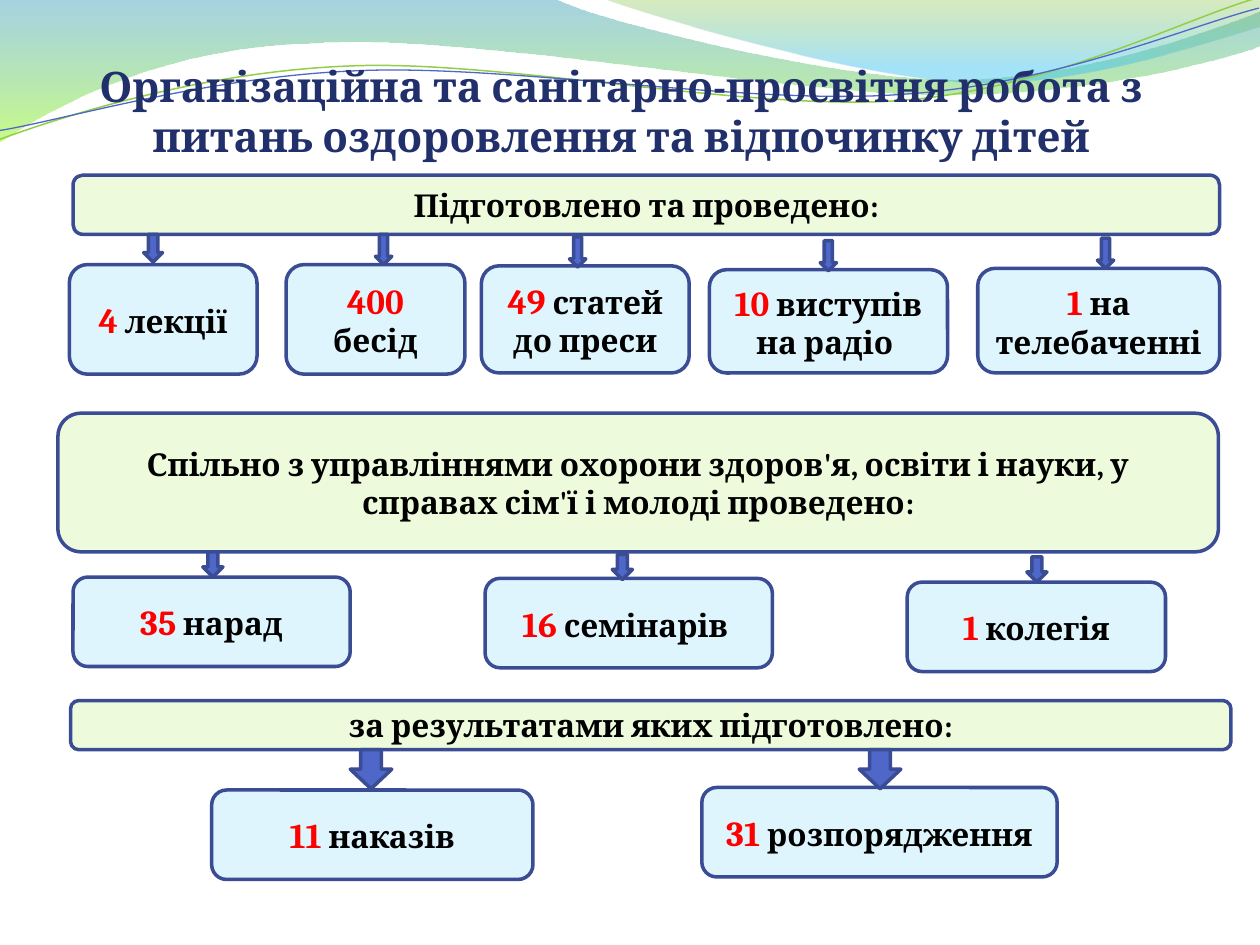
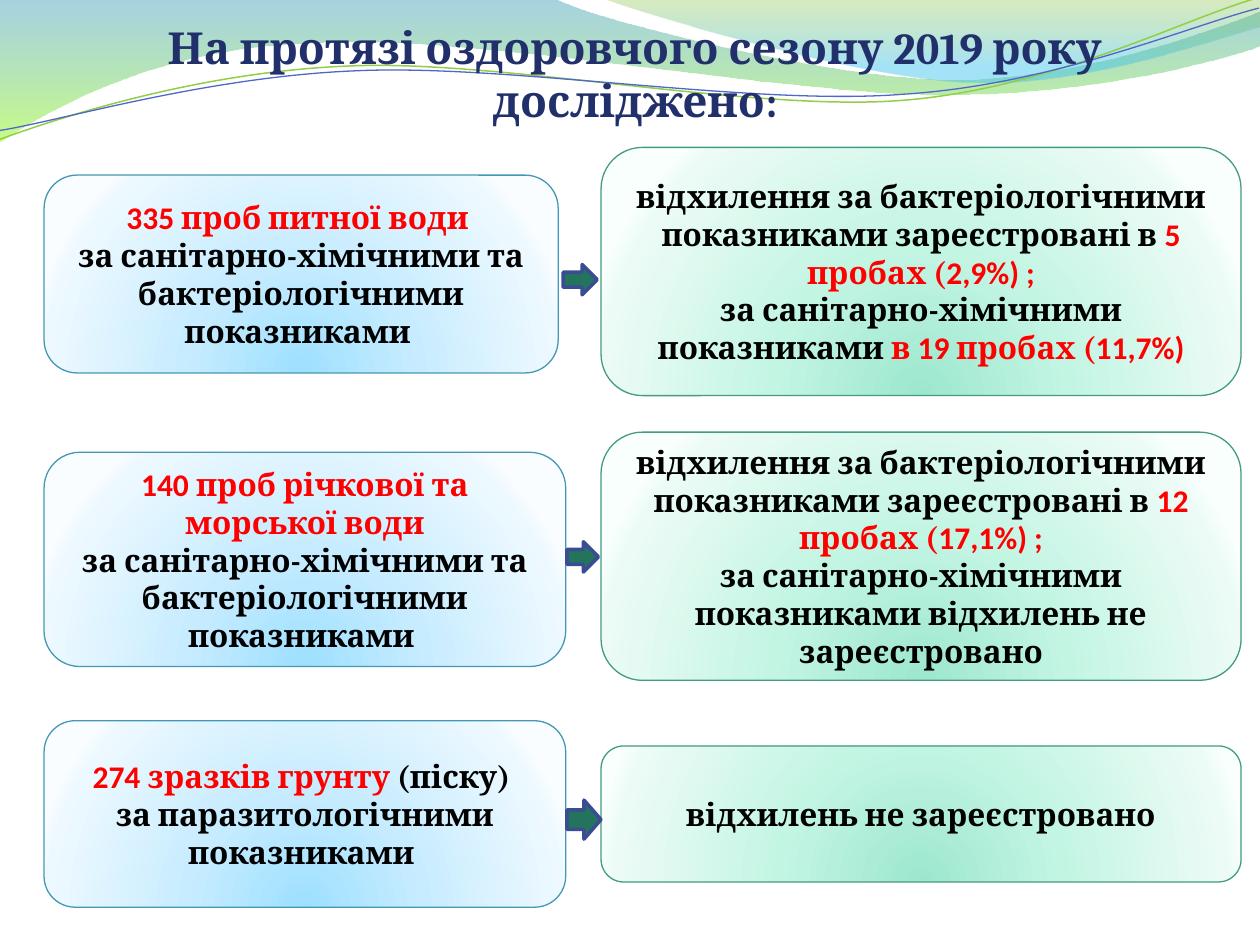
from dataclasses import dataclass
from typing import NamedTuple

from lxml import etree
from pptx import Presentation
from pptx.dml.color import RGBColor
from pptx.enum.shapes import MSO_SHAPE
from pptx.enum.text import MSO_ANCHOR, PP_ALIGN
from pptx.oxml.ns import qn
from pptx.util import Inches, Pt

ROUND_RECT = MSO_SHAPE.ROUNDED_RECTANGLE
DOWN_ARROW = MSO_SHAPE.DOWN_ARROW
RIGHT_ARROW = MSO_SHAPE.RIGHT_ARROW
CENTER = PP_ALIGN.CENTER
MIDDLE, BOTTOM = MSO_ANCHOR.MIDDLE, MSO_ANCHOR.BOTTOM

# Shared fonts and colours
SERIF, SANS = "Cambria", "Calibri"
NAVY, OUTLINE, BLUE, GREEN = "21306A", "3A4C94", "4E67C8", "23735D"
HEADER_FILL, ITEM_FILL = "EDFBDC", "DFF5FD"
BLACK, RED = "000000", "FF0000"


class Span(NamedTuple):
    text: str
    color: str = BLACK
    font: str = SERIF
    size: float = 18


class Area(NamedTuple):
    left: float
    top: float
    width: float
    height: float


class Stop(NamedTuple):
    position: int
    color: str
    alpha: int = 100


class Glow(NamedTuple):
    stops: list[Stop]
    line: str


@dataclass
class Wave:
    """Start point, then 2 numbers for a straight piece or 6 for a cubic curve."""
    start: tuple[float, float]
    pieces: list[tuple[float, ...]]
    stops: list[Stop] | None = None
    line: str = ""
    weight: float = 0
    rotation: float = 0


@dataclass
class Item:
    area: Area
    count: str
    label: str
    arrow: Area


@dataclass
class Section:
    header: str
    area: Area
    items: list[Item]


@dataclass
class Finding:
    sample_area: Area
    sample: list[list[Span]]
    result_area: Area
    result: list[list[Span]]
    arrow: Area


WATER = Glow([Stop(0, "9DE0FF"), Stop(43, "C8ECFF"), Stop(93, "EEF9FF"),
              Stop(100, "F9FDFF")], "4498B5")
MINT = Glow([Stop(0, "9DE7CE"), Stop(43, "C3F5E3"), Stop(93, "ECFBF6"),
             Stop(100, "F8FFFC")], "449A82")

WAVES = [
    Wave((0, 0), [(4.4, -0.01), (4.76, 0.17, 6.64, 0.63, 7.58, 0.63),
                  (8.53, 0.63, 9.58, 0.26, 10, 0.09), (10.01, 0.36),
                  (9.83, 0.44, 8.7, 0.76, 7.46, 0.75),
                  (6.22, 0.75, 3.82, 0.28, 2.57, 0.34),
                  (1.29, 0.36, 0.46, 0.83, -0.01, 1.13), (0, 0)],
         stops=[Stop(0, "3B9CBF", 45), Stop(100, "9CFA24", 55)]),
    Wave((4.79, -0.01), [(5.09, 0.11, 6.82, 0.62, 7.69, 0.65),
                         (8.56, 0.69, 9.61, 0.32, 10, 0.21), (10, 0), (4.79, -0.01)],
         stops=[Stop(0, "7EBE2C", 30), Stop(80, "39C1F1", 45)]),
    Wave((-0.02, 0.87), [(0.46, 0.72, 1.58, 0.41, 2.77, 0.42),
                         (3.95, 0.42, 5.92, 0.93, 7.12, 0.9),
                         (8.32, 0.87, 9.4, 0.36, 10, 0.22)],
         line="93CE48", weight=0.85, rotation=357.3),
    Wave((-0.02, 0.8), [(0.45, 0.75, 1.64, 0.45, 2.83, 0.46),
                        (4.03, 0.46, 5.96, 0.89, 7.16, 0.85),
                        (8.36, 0.83, 9.43, 0.42, 10.01, 0.3)],
         line=BLUE, weight=0.75, rotation=357.3),
]

SECTIONS = [
    Section("Підготовлено та проведено:", Area(0.58, 1.39, 9.1, 0.47), [
        Item(Area(0.55, 2.1, 1.49, 0.87), "4", " лекції", Area(1.14, 1.86, 0.15, 0.22)),
        Item(Area(2.27, 2.1, 1.42, 0.87), "400", " бесід", Area(2.98, 1.86, 0.13, 0.24)),
        Item(Area(3.82, 2.11, 1.65, 0.85), "49", " статей до преси",
             Area(4.52, 1.88, 0.13, 0.24)),
        Item(Area(5.63, 2.14, 1.89, 0.82), "10", " виступів на радіо ",
             Area(6.51, 1.91, 0.13, 0.24)),
        Item(Area(7.76, 2.13, 1.92, 0.83), "1", " на телебаченні",
             Area(8.71, 1.89, 0.13, 0.24)),
    ]),
    Section("Спільно з управліннями охорони здоров'я, освіти і науки, у справах "
            "сім'ї і молоді проведено:", Area(0.46, 3.28, 9.21, 1.1), [
        Item(Area(0.58, 4.58, 2.2, 0.71), "35", " нарад", Area(1.61, 4.38, 0.16, 0.2)),
        Item(Area(3.85, 4.59, 2.28, 0.71), "16", " семінарів ",
             Area(4.86, 4.4, 0.16, 0.2)),
        Item(Area(7.2, 4.62, 2.05, 0.71), "1", " колегія", Area(8.15, 4.42, 0.16, 0.2)),
    ]),
    Section("за результатами яких підготовлено:", Area(0.56, 5.56, 9.21, 0.39), [
        Item(Area(1.68, 6.27, 2.55, 0.71), "11", " наказів",
             Area(2.78, 5.95, 0.33, 0.31)),
        Item(Area(5.57, 6.25, 2.82, 0.71), "31", " розпорядження",
             Area(6.82, 5.95, 0.33, 0.31)),
    ]),
]

INDICATORS = [Span("за санітарно-хімічними та бактеріологічними показниками ")]


def deviations(count: str, share: str) -> list[Span]:
    return [Span("відхилення за бактеріологічними показниками зареєстровані в "),
            Span(count, RED, SANS), Span("пробах (", RED), Span(share, RED, SANS)]


FINDINGS = [
    Finding(Area(0.35, 1.39, 4.08, 1.57),
            [[Span("335", RED, SANS), Span(" проб питної води ", RED)], INDICATORS],
            Area(4.77, 1.17, 5.08, 1.97),
            [deviations("5 ", "2,9%) ;"),
             [Span("за санітарно-хімічними показниками "), Span("в ", RED),
              Span("19", RED, SANS), Span(" пробах (", RED),
              Span("11,7%)", RED, SANS)]],
            Area(4.47, 2.1, 0.27, 0.24)),
    Finding(Area(0.35, 3.59, 4.14, 1.7),
            [[Span("140 ", RED, SANS), Span("проб річкової та морської води", RED)],
             INDICATORS],
            Area(4.77, 3.43, 5.08, 1.97),
            [deviations("12 ", "17,1%) ;"),
             [Span("за санітарно-хімічними показниками відхилень не зареєстровано")]],
            Area(4.5, 4.3, 0.25, 0.24)),
    Finding(Area(0.35, 5.72, 4.14, 1.48),
            [[Span("274", RED, SANS), Span(" зразків грунту ", RED), Span("(піску) ")],
             [Span("за паразитологічними показниками ")]],
            Area(4.77, 5.92, 5.08, 1.08),
            [[Span("відхилень не зареєстровано")]],
            Area(4.5, 6.35, 0.27, 0.31)),
]


def rgb(value: str) -> RGBColor:
    return RGBColor.from_string(value)


def set_line(shape, color: str, weight: float) -> None:
    shape.line.color.rgb = rgb(color)
    shape.line.width = Pt(weight)


def set_gradient(shape, stops: list[Stop], radial: bool = False) -> None:
    shape.fill.background()
    gradient = etree.Element(qn("a:gradFill"), rotWithShape="1")
    stop_list = etree.SubElement(gradient, qn("a:gsLst"))
    for stop in stops:
        mark = etree.SubElement(stop_list, qn("a:gs"), pos=str(stop.position * 1000))
        color = etree.SubElement(mark, qn("a:srgbClr"), val=stop.color)
        if stop.alpha < 100:
            etree.SubElement(color, qn("a:alpha"), val=str(stop.alpha * 1000))
    if radial:
        center = etree.SubElement(gradient, qn("a:path"), path="circle")
        etree.SubElement(center, qn("a:fillToRect"),
                         l="50000", t="130000", r="50000", b="-30000")
    else:
        etree.SubElement(gradient, qn("a:lin"), ang="5400000", scaled="1")
    properties = shape.element.spPr
    properties.replace(properties.find(qn("a:noFill")), gradient)


def write(frame, paragraphs: list[list[Span]], anchor=MIDDLE) -> None:
    frame.word_wrap = True
    frame.vertical_anchor = anchor
    for index, spans in enumerate(paragraphs):
        para = frame.add_paragraph() if index else frame.paragraphs[0]
        para.alignment = CENTER
        for span in spans:
            run = para.add_run()
            run.text = span.text
            run.font.name = span.font
            run.font.size = Pt(span.size)
            run.font.bold = True
            run.font.color.rgb = rgb(span.color)


def add_preset(page, kind, area: Area, fill: str | Glow):
    shape = page.shapes.add_shape(kind, *map(Inches, area))
    shape.shadow.inherit = False
    if isinstance(fill, Glow):
        set_gradient(shape, fill.stops, radial=True)
        set_line(shape, fill.line, 0.75)
    else:
        shape.fill.solid()
        shape.fill.fore_color.rgb = rgb(fill)
        set_line(shape, OUTLINE, 2)
    return shape


def add_box(page, area: Area, fill: str | Glow, paragraphs: list[list[Span]]) -> None:
    write(add_preset(page, ROUND_RECT, area, fill).text_frame, paragraphs)


def bend(shape, pieces: list[tuple[float, ...]]) -> None:
    """Turn the straight segments of a freeform into its cubic curves."""
    segments = list(shape.element.spPr.iter(qn("a:lnTo")))
    for segment, piece in zip(segments, pieces):
        if len(piece) == 2:
            continue
        curve = etree.Element(qn("a:cubicBezTo"))
        for x, y in zip(piece[::2], piece[1::2]):
            etree.SubElement(curve, qn("a:pt"), x=str(Inches(x) - shape.left),
                             y=str(Inches(y) - shape.top))
        segment.getparent().replace(segment, curve)


def add_wave(page, wave: Wave):
    builder = page.shapes.build_freeform(*map(Inches, wave.start))
    ends = [(Inches(piece[-2]), Inches(piece[-1])) for piece in wave.pieces]
    builder.add_line_segments(ends, close=bool(wave.stops))
    shape = builder.convert_to_shape()
    bend(shape, wave.pieces)
    shape.rotation = wave.rotation
    shape.shadow.inherit = False
    if wave.stops:
        set_gradient(shape, wave.stops)
        shape.line.fill.background()
    else:
        shape.fill.background()
        set_line(shape, wave.line, wave.weight)
    return shape


def add_page(deck, title: str, area: Area, size: float):
    page = deck.slides.add_slide(deck.slide_layouts[6])
    frame = page.shapes.add_textbox(*map(Inches, area)).text_frame
    frame.margin_left = frame.margin_right = frame.margin_bottom = 0
    frame.margin_top = Inches(0.05)
    write(frame, [[Span(title, NAVY, SERIF, size)]], BOTTOM)
    return page


def main() -> None:
    deck = Presentation()
    deck.slide_width, deck.slide_height = Inches(10), Inches(7.5)

    # Outreach work: headers with arrows to counted items
    page = add_page(deck, "Організаційна та санітарно-просвітня робота з питань "
                    "оздоровлення та відпочинку дітей", Area(0.43, 0.21, 9, 1.07), 24)

    # Waves move to the layout, so both pages share them
    for wave in WAVES:
        page.slide_layout.shapes.element.append(add_wave(page, wave).element)

    for section in SECTIONS:
        add_box(page, section.area, HEADER_FILL, [[Span(section.header)]])
        for item in section.items:
            add_box(page, item.area, ITEM_FILL,
                    [[Span(item.count, RED, size=20), Span(item.label)]])
            add_preset(page, DOWN_ARROW, item.arrow, BLUE)

    # Season's tests: samples on the left, results on the right
    page = add_page(deck, "На протязі оздоровчого сезону 2019 року досліджено:",
                    Area(0.5, 0.13, 9.08, 0.87), 25.2)
    for finding in FINDINGS:
        add_box(page, finding.sample_area, WATER, finding.sample)
        add_box(page, finding.result_area, MINT, finding.result)
        add_preset(page, RIGHT_ARROW, finding.arrow, GREEN)

    deck.save("out.pptx")


if __name__ == "__main__":
    main()
